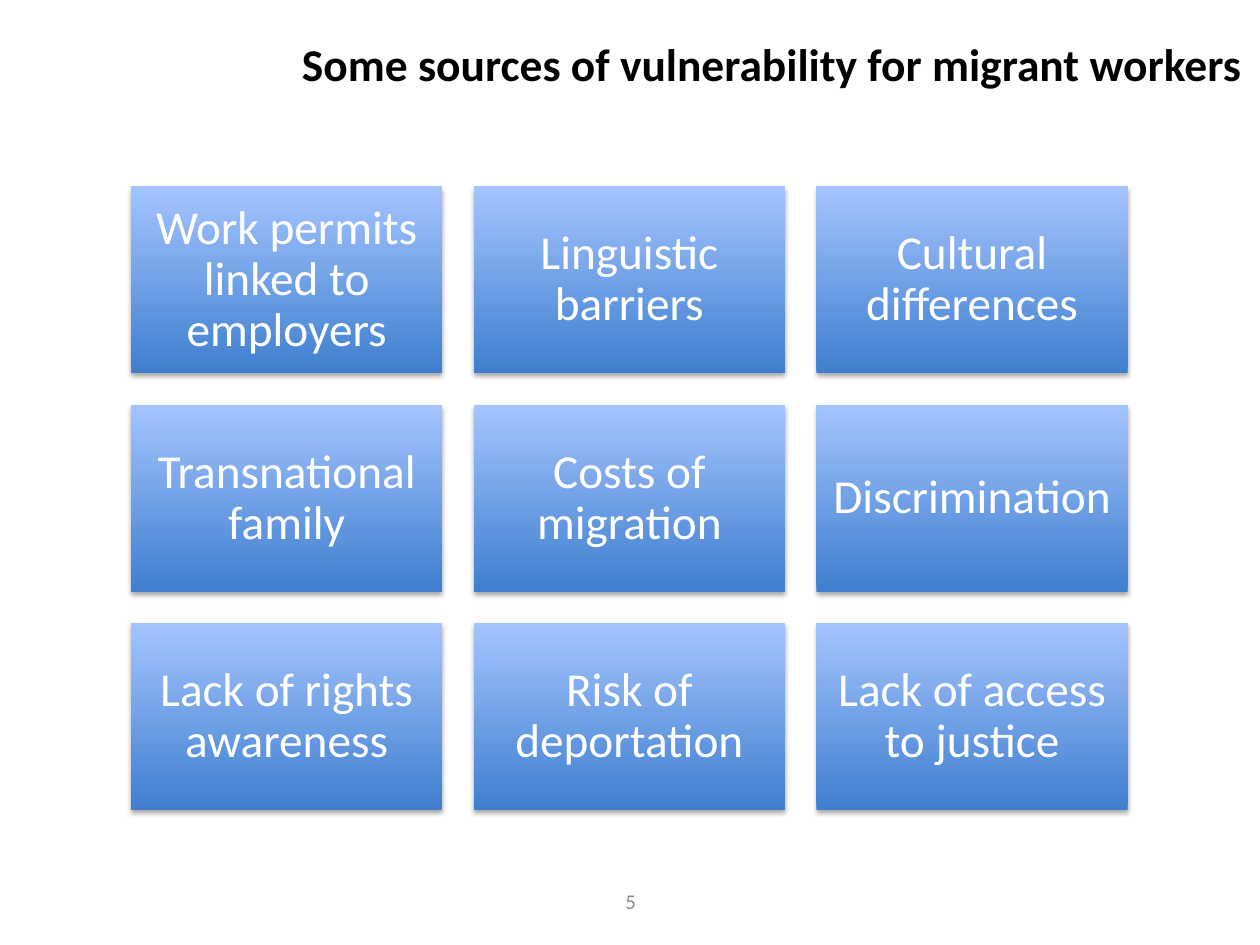
from lxml import etree
from pptx import Presentation
from pptx.dml.color import RGBColor
from pptx.enum.shapes import MSO_SHAPE
from pptx.enum.text import MSO_ANCHOR, PP_ALIGN
from pptx.oxml.ns import qn
from pptx.util import Inches, Pt

RECTANGLE = MSO_SHAPE.RECTANGLE
MIDDLE = MSO_ANCHOR.MIDDLE
CENTER = PP_ALIGN.CENTER

BLACK = RGBColor(0x00, 0x00, 0x00)
WHITE = RGBColor(0xFF, 0xFF, 0xFF)
GRAY = RGBColor(0x8C, 0x8C, 0x8C)
DARK_BLUE = RGBColor(0x3F, 0x7F, 0xCE)
LIGHT_BLUE = RGBColor(0xA4, 0xC4, 0xFF)

TITLE = "Some sources of vulnerability for migrant workers"
SOURCES = [
    ["Work permits linked to employers", "Linguistic barriers", "Cultural differences"],
    ["Transnational family", "Costs of migration", "Discrimination"],
    ["Lack of rights awareness", "Risk of deportation", "Lack of access to justice"],
]


def write_centered(tf, text, size, color, bold=False):
    tf.word_wrap = True
    tf.vertical_anchor = MIDDLE
    p = tf.paragraphs[0]
    p.alignment = CENTER
    r = p.add_run()
    r.text = text
    r.font.name = "Calibri"
    r.font.size = Pt(size)
    r.font.bold = bold
    r.font.color.rgb = color
    return p


def add_soft_shadow(sp):
    sp.shadow.inherit = False
    effects = sp._element.spPr.find(qn("a:effectLst"))
    shadow = etree.SubElement(
        effects, qn("a:outerShdw"), blurRad=str(Pt(3.1)), dist=str(Pt(1.8)),
        dir="5400000", rotWithShape="0")
    color = etree.SubElement(shadow, qn("a:srgbClr"), val=str(BLACK))
    etree.SubElement(color, qn("a:alpha"), val="35000")


def add_title(s, left, top, width, height):
    title = s.shapes.title
    title.left, title.top, title.width, title.height = left, top, width, height
    write_centered(title.text_frame, TITLE, 26, BLACK, bold=True)


def add_card(s, text, left, top, width, height):
    sp = s.shapes.add_shape(RECTANGLE, left, top, width, height)
    sp.fill.gradient()
    sp.fill.gradient_angle = 90
    for stop, color in zip(sp.fill.gradient_stops, (DARK_BLUE, LIGHT_BLUE)):
        stop.color.rgb = color
    sp.line.fill.background()
    add_soft_shadow(sp)
    tf = sp.text_frame
    tf.margin_left = tf.margin_right = Inches(0.11)
    tf.margin_top = tf.margin_bottom = Inches(0.11)
    write_centered(tf, text, 27, WHITE).line_spacing = 0.9


def add_card_grid(s, left, top, width, height):
    gap = Inches(0.25)
    card_width = (width - 2 * gap) // 3
    card_height = (height - 2 * gap) // 3
    for row, texts in enumerate(SOURCES):
        for col, text in enumerate(texts):
            add_card(s, text, left + col * (card_width + gap),
                     top + row * (card_height + gap), card_width, card_height)


def add_page_number(s, left, top, width, height):
    box = s.shapes.add_textbox(left, top, width, height)
    write_centered(box.text_frame, "5", 12, GRAY)


def main():
    prs = Presentation()
    prs.slide_width, prs.slide_height = Inches(10), Inches(7.5)
    s = prs.slides.add_slide(prs.slide_layouts[5])
    add_title(s, Inches(1.63), Inches(-0.12), Inches(9), Inches(1.25))
    add_card_grid(s, Inches(1.04), Inches(1.48), Inches(7.91), Inches(4.95))
    add_page_number(s, Inches(3.42), Inches(6.95), Inches(3.17), Inches(0.4))
    prs.save("out.pptx")


if __name__ == "__main__":
    main()
